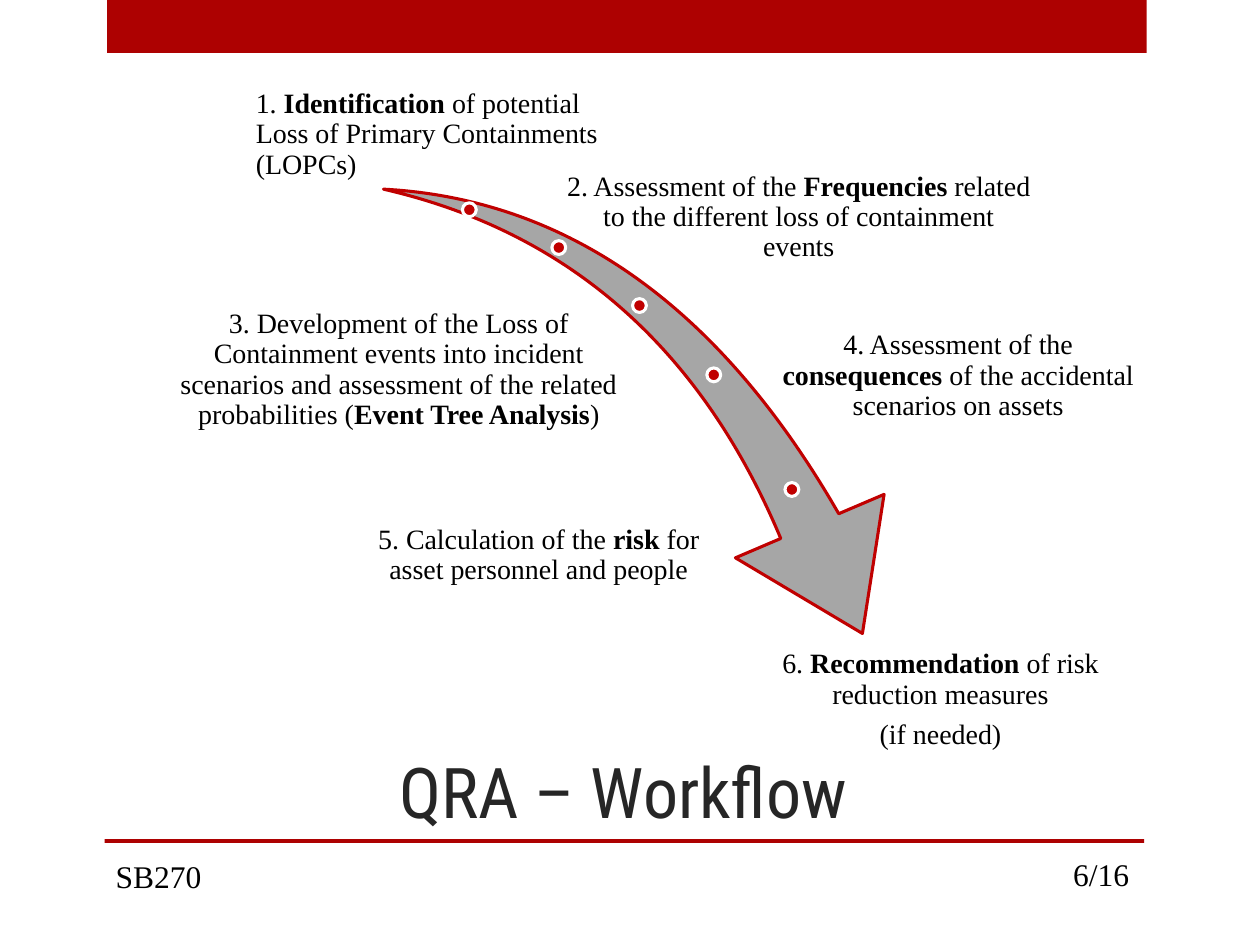
import pptx
import pptx.util
import pptx.dml.color
import pptx.enum.shapes
import pptx.enum.text

Inches, Pt = pptx.util.Inches, pptx.util.Pt
RGBColor = pptx.dml.color.RGBColor
SHAPE = pptx.enum.shapes.MSO_SHAPE
ALIGN = pptx.enum.text.PP_ALIGN
ANCHOR = pptx.enum.text.MSO_ANCHOR

RED = RGBColor(0xAD, 0x01, 0x01)
CRIMSON = RGBColor(0xC0, 0x00, 0x00)
GREY = RGBColor(0xA6, 0xA6, 0xA6)
DARK = RGBColor(0x26, 0x26, 0x26)
BLACK = RGBColor(0x00, 0x00, 0x00)
WHITE = RGBColor(0xFF, 0xFF, 0xFF)


class Page:
    body = "Times New Roman"
    head = "Roboto Condensed"

    def __init__(self, slide):
        self.slide = slide

    def font(self, font, name, size, color):
        font.name, font.size = name, Pt(size)
        font.color.rgb = color

    def title(self, text, *box):
        """Fill and place the title placeholder."""
        shape = self.slide.shapes.title
        shape.left, shape.top, shape.width, shape.height = map(Inches, box)
        frame = shape.text_frame
        frame.text = text
        frame.vertical_anchor = ANCHOR.BOTTOM
        para = frame.paragraphs[0]
        para.alignment = ALIGN.CENTER
        self.font(para.runs[0].font, self.head, 40, DARK)

    def shape(self, kind, box, fill, line=None):
        """Add a filled preset shape, outlined if a line colour is given."""
        shape = self.slide.shapes.add_shape(kind, *map(Inches, box))
        shape.shadow.inherit = False
        shape.fill.solid()
        shape.fill.fore_color.rgb = fill
        if line is None:
            shape.line.fill.background()
        else:
            shape.line.color.rgb = line
            shape.line.width = Pt(1.75)
        return shape

    def label(self, text, box, align):
        """Add a footer label."""
        frame = self.slide.shapes.add_textbox(*map(Inches, box)).text_frame
        frame.word_wrap = True
        frame.text = text
        para = frame.paragraphs[0]
        para.alignment = align
        self.font(para.runs[0].font, self.body, 18, BLACK)

    def step(self, lines, box, anchor=ANCHOR.MIDDLE, align=ALIGN.CENTER):
        """Add a step; words between asterisks are bold."""
        frame = self.slide.shapes.add_textbox(*map(Inches, box)).text_frame
        frame.word_wrap = True
        frame.vertical_anchor = anchor
        frame.margin_left = frame.margin_right = Inches(0.02)
        frame.margin_top = frame.margin_bottom = Inches(0.02)
        for i, line in enumerate(lines):
            para = frame.add_paragraph() if i else frame.paragraphs[0]
            para.alignment = align
            para.line_spacing = 0.9
            para.space_after = Pt(5.6)
            for j, part in enumerate(line.split("*")):
                run = para.add_run()
                run.text = part
                run.font.bold = j % 2 == 1
                self.font(run.font, self.body, 16, BLACK)


def main():
    deck = pptx.Presentation()
    deck.slide_width, deck.slide_height = Inches(10), Inches(7.5)
    page = Page(deck.slides.add_slide(deck.slide_layouts[5]))

    # Frame and footer
    page.shape(SHAPE.RECTANGLE, (0.85, 0, 8.25, 0.42), RED)
    page.shape(SHAPE.RECTANGLE, (0.83, 6.66, 8.25, 0.03), RED)
    page.label("SB270", (0.82, 6.75, 0.93, 0.4), ALIGN.LEFT)
    page.label("6/16", (7.96, 6.74, 1.1, 0.4), ALIGN.RIGHT)

    # Steps
    page.step(["1. *Identification* of potential Loss of Primary Containments (LOPCs)"],
              (2.01, 0.62, 2.82, 0.83), ANCHOR.BOTTOM, ALIGN.LEFT)
    page.step(["2. Assessment of the *Frequencies* related to the different "
               "loss of containment events"], (4.46, 1.31, 3.76, 0.83))
    page.step(["3. Development of the Loss of Containment events into incident scenarios "
               "and assessment of the related probabilities (*Event Tree Analysis*)"],
              (1.31, 2.19, 3.71, 1.49))
    page.step(["4. Assessment of the *consequences* of the accidental scenarios on assets"],
              (6.12, 2.57, 2.97, 0.83))
    page.step(["5. Calculation of the *risk *for asset personnel and people"],
              (2.85, 4.15, 2.85, 0.62), ANCHOR.TOP)
    page.step(["6. *Recommendation* of risk reduction measures", "(if needed)"],
              (5.9, 5.14, 3.13, 0.83))

    # Arrow with one dot per stage
    arrow = page.shape(SHAPE.SWOOSH_ARROW, (2.94, 1.64, 4.47, 3.11), GREY, CRIMSON)
    arrow.adjustments[0], arrow.adjustments[1] = 0.16, 0.31
    arrow.rotation = 73.3
    for x, y in ((3.67, 1.61), (4.38, 1.91), (5.02, 2.37), (5.61, 2.92), (6.23, 3.83)):
        page.shape(SHAPE.OVAL, (x, y, 0.11, 0.11), CRIMSON, WHITE)

    # Title
    page.title("QRA – Workflow", 0.83, 5.79, 8.23, 0.87)

    deck.save("out.pptx")


if __name__ == "__main__":
    main()
